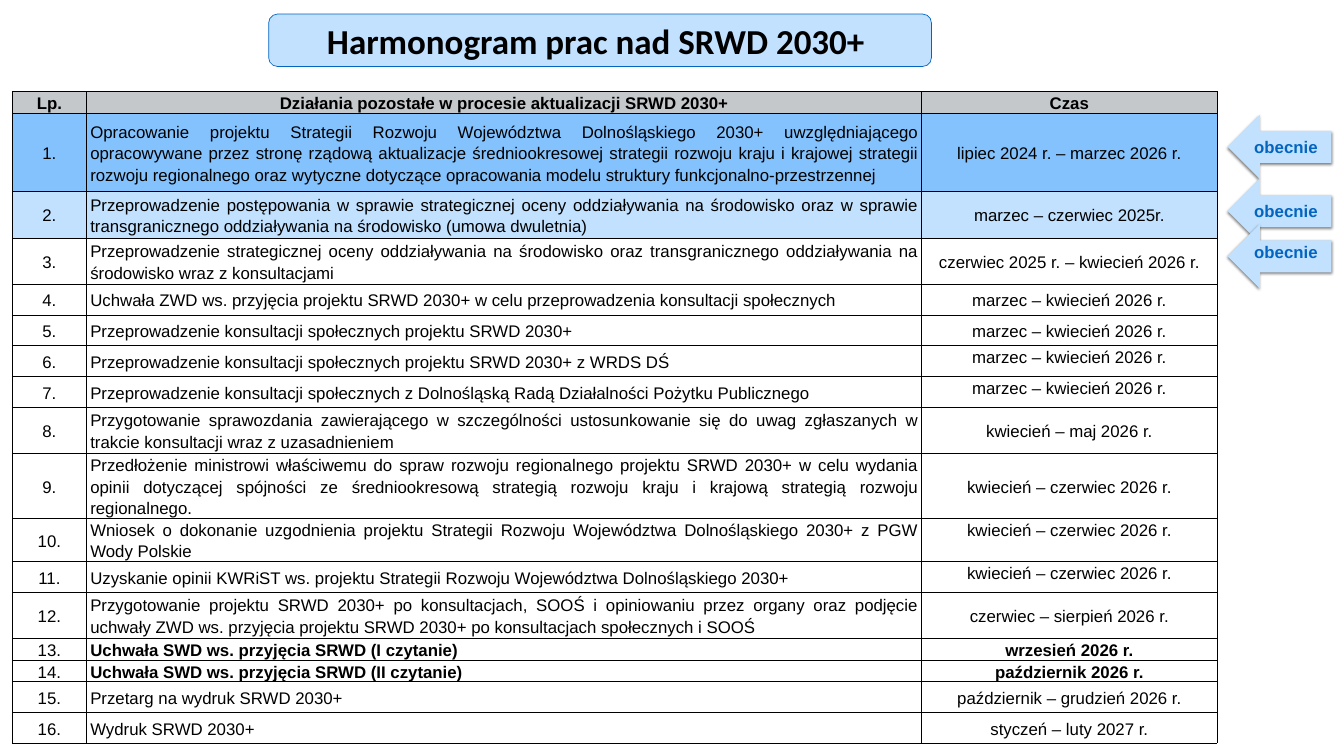
from lxml import etree
from pptx import Presentation
from pptx.dml.color import RGBColor
from pptx.enum.shapes import MSO_SHAPE
from pptx.enum.text import MSO_ANCHOR, PP_ALIGN
from pptx.oxml import parse_xml
from pptx.oxml.ns import qn
from pptx.util import Cm, Pt

CENTER, JUSTIFY = PP_ALIGN.CENTER, PP_ALIGN.JUSTIFY
TOP, MIDDLE = MSO_ANCHOR.TOP, MSO_ANCHOR.MIDDLE
ROUNDED, ARROW = MSO_SHAPE.ROUNDED_RECTANGLE, MSO_SHAPE.RIGHT_ARROW
NS = "http://schemas.openxmlformats.org/drawingml/2006/main"

BLACK, BLUE, PALE, SKY, GREY = "000000", "0365C0", "C1E1FE", "83C2FD", "C4C8CB"

# Content
TITLE = "Harmonogram prac nad SRWD 2030+ "
NOW = "obecnie"
HEADER = ("Lp.", "Działania pozostałe w procesie aktualizacji SRWD 2030+", "Czas")
TASKS = [
    ("Opracowanie projektu Strategii Rozwoju Województwa Dolnośląskiego 2030+ uwzględniającego "
     "opracowywane przez stronę rządową aktualizacje średniookresowej strategii rozwoju kraju i "
     "krajowej strategii rozwoju regionalnego oraz wytyczne dotyczące opracowania modelu struktury "
     "funkcjonalno-przestrzennej", "lipiec 2024 r. – marzec 2026 r."),
    ("Przeprowadzenie postępowania w sprawie strategicznej oceny oddziaływania na środowisko oraz "
     "w sprawie transgranicznego oddziaływania na środowisko (umowa dwuletnia)",
     "marzec – czerwiec 2025r."),
    ("Przeprowadzenie strategicznej oceny oddziaływania na środowisko oraz transgranicznego "
     "oddziaływania na środowisko wraz z konsultacjami", "czerwiec 2025 r. – kwiecień 2026 r."),
    ("Uchwała ZWD ws. przyjęcia projektu SRWD 2030+ w celu przeprowadzenia konsultacji społecznych",
     "marzec – kwiecień 2026 r."),
    ("Przeprowadzenie konsultacji społecznych projektu SRWD 2030+", "marzec – kwiecień 2026 r."),
    ("Przeprowadzenie konsultacji społecznych projektu SRWD 2030+ z WRDS DŚ",
     "marzec – kwiecień 2026 r."),
    ("Przeprowadzenie konsultacji społecznych z Dolnośląską Radą Działalności Pożytku Publicznego",
     "marzec – kwiecień 2026 r."),
    ("Przygotowanie sprawozdania zawierającego w szczególności ustosunkowanie się do uwag "
     "zgłaszanych w trakcie konsultacji wraz z uzasadnieniem", "kwiecień – maj 2026 r."),
    ("Przedłożenie ministrowi właściwemu do spraw rozwoju regionalnego projektu SRWD 2030+ w celu "
     "wydania opinii dotyczącej spójności ze średniookresową strategią rozwoju kraju i krajową "
     "strategią rozwoju regionalnego.", "kwiecień – czerwiec 2026 r."),
    ("Wniosek o dokonanie uzgodnienia projektu Strategii Rozwoju Województwa Dolnośląskiego 2030+ "
     "z PGW Wody Polskie", "kwiecień – czerwiec 2026 r."),
    ("Uzyskanie opinii KWRiST ws. projektu Strategii Rozwoju Województwa Dolnośląskiego 2030+",
     "kwiecień – czerwiec 2026 r."),
    ("Przygotowanie projektu SRWD 2030+ po konsultacjach, SOOŚ i opiniowaniu przez organy oraz "
     "podjęcie uchwały ZWD ws. przyjęcia projektu SRWD 2030+ po konsultacjach społecznych i SOOŚ",
     "czerwiec – sierpień 2026 r."),
    ("Uchwała SWD ws. przyjęcia SRWD (I czytanie)", "wrzesień 2026 r."),
    ("Uchwała SWD ws. przyjęcia SRWD (II czytanie)", "październik 2026 r."),
    ("Przetarg na wydruk SRWD 2030+", "październik – grudzień 2026 r."),
    ("Wydruk SRWD 2030+", "styczeń – luty 2027 r."),
]
ROWS = [HEADER] + [(f"{i}.", *task) for i, task in enumerate(TASKS, 1)]

# Layout in cm; row settings are keyed by row number, the header is row 0
COL_WIDTHS = (3.76, 42.06, 14.91)
ROW_HEIGHT = 1.55
ROW_HEIGHTS = {0: 0.74, 1: 3.94, 2: 2.34, 8: 2.34, 9: 3.15, 12: 2.34, 13: 0.74, 14: 0.74}
ROW_FILLS = {0: GREY, 1: SKY, 2: PALE}
BOLD_TASKS = (13, 14)
TOP_TIMES = (6, 7, 10, 11)
MARKERS = [(5.79, 6.68), (9.02, 9.91), (11.3, 11.99)]  # arrow top, label top


def rgb(color):
    return RGBColor.from_string(color)


def add_text(tf, text, size, font="Arial", color=BLACK, bold=False, align=CENTER):
    p = tf.paragraphs[0]
    p.alignment = align
    r = p.add_run()
    r.text = text
    r.font.size, r.font.name, r.font.bold = Pt(size), font, bold
    r.font.color.rgb = rgb(color)
    return p


def set_margins(tf, margin):
    tf.margin_left = tf.margin_right = tf.margin_top = tf.margin_bottom = Cm(margin)
    tf.vertical_anchor = MIDDLE


def add_borders(cell):
    tc_pr = cell._tc.get_or_add_tcPr()
    for i, side in enumerate(("lnL", "lnR", "lnT", "lnB")):
        ln = etree.Element(qn(f"a:{side}"), w=str(Pt(1)))
        fill = etree.SubElement(ln, qn("a:solidFill"))
        etree.SubElement(fill, qn("a:srgbClr"), val=BLACK)
        tc_pr.insert(i, ln)


def add_shadow(shape):
    shape._element.spPr.append(parse_xml(
        f'<a:effectLst xmlns:a="{NS}"><a:outerShdw blurRad="{Pt(4)}" dist="{Pt(2)}" '
        f'dir="5400000" rotWithShape="0"><a:srgbClr val="{BLACK}"><a:alpha val="50000"/>'
        '</a:srgbClr></a:outerShdw></a:effectLst>'))


prs = Presentation()
prs.slide_width, prs.slide_height = Cm(67.73), Cm(38.1)
s = prs.slides.add_slide(prs.slide_layouts[6])

# Title
sp = s.shapes.add_shape(ROUNDED, Cm(13.54), Cm(0.71), Cm(33.4), Cm(2.64))
sp.shadow.inherit = False
sp.fill.solid()
sp.fill.fore_color.rgb = rgb(PALE)
sp.line.color.rgb = rgb(BLUE)
sp.line.width = Pt(1)
set_margins(sp.text_frame, 0.13)
add_text(sp.text_frame, TITLE, 50, "Calibri", bold=True)

# Schedule table
heights = [ROW_HEIGHTS.get(i, 2.34 if i == 3 else ROW_HEIGHT) for i in range(len(ROWS))]
table = s.shapes.add_table(len(ROWS), len(COL_WIDTHS), Cm(0.61), Cm(4.62),
                           Cm(sum(COL_WIDTHS)), Cm(sum(heights))).table
table.horz_banding = False
for col, width in zip(table.columns, COL_WIDTHS):
    col.width = Cm(width)
for i, (row, height) in enumerate(zip(ROWS, heights)):
    table.rows[i].height = Cm(height)
    for j, text in enumerate(row):
        cell = table.cell(i, j)
        cell.margin_left = cell.margin_right = Cm(0.18)
        cell.margin_top = cell.margin_bottom = 0
        cell.vertical_anchor = TOP if j == 2 and i in TOP_TIMES else MIDDLE
        if i in ROW_FILLS:
            cell.fill.solid()
            cell.fill.fore_color.rgb = rgb(ROW_FILLS[i])
        else:
            cell.fill.background()
        add_borders(cell)
        p = add_text(cell.text_frame, text, 24, bold=i == 0 or (j > 0 and i in BOLD_TASKS),
                     align=JUSTIFY if i and j == 1 else CENTER)
        p.line_spacing = 1.15
        p.space_after = Pt(10)

# Arrows marking the current stages
for arrow_top, label_top in MARKERS:
    sp = s.shapes.add_shape(ARROW, Cm(61.87), Cm(arrow_top), Cm(5.23), Cm(3.23))
    sp.rotation = 180
    sp.fill.solid()
    sp.fill.fore_color.rgb = rgb(PALE)
    sp.line.fill.background()
    add_shadow(sp)
    tf = s.shapes.add_textbox(Cm(62.99), Cm(label_top), Cm(3.63), Cm(1.42)).text_frame
    set_margins(tf, 0.2)
    add_text(tf, NOW, 24, color=BLUE, bold=True)

prs.save("out.pptx")
